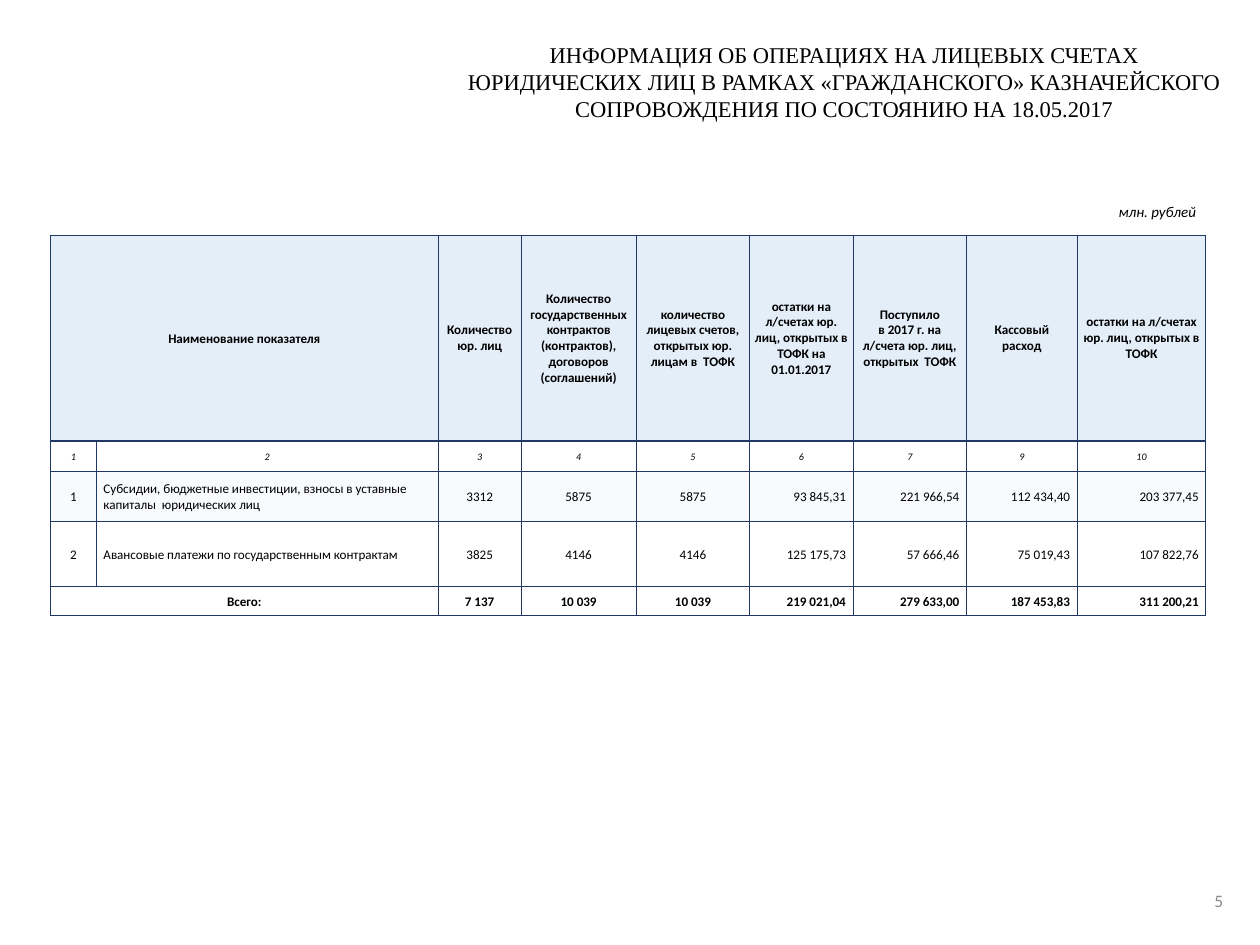
from pptx import Presentation
from pptx.dml.color import RGBColor
from pptx.enum.text import MSO_ANCHOR, MSO_AUTO_SIZE, PP_ALIGN
from pptx.oxml import parse_xml
from pptx.oxml.ns import nsdecls, qn
from pptx.util import Inches, Pt

LEFT, CENTER, RIGHT = PP_ALIGN.LEFT, PP_ALIGN.CENTER, PP_ALIGN.RIGHT
TOP, MIDDLE = MSO_ANCHOR.TOP, MSO_ANCHOR.MIDDLE

BLACK = RGBColor(0x00, 0x00, 0x00)
GRAY = RGBColor(0x8C, 0x8C, 0x8C)
LIGHT_BLUE = RGBColor(0xDE, 0xEB, 0xF7)
NAVY = RGBColor(0x20, 0x38, 0x64)

SLIDE_WIDTH, SLIDE_HEIGHT = 14, 10.5
TITLE_LEFT, TITLE_WIDTH = 5.05, 8.66
RIGHT_EDGE = TITLE_LEFT + TITLE_WIDTH
TABLE_LEFT, TABLE_TOP = 0.56, 2.62
COLUMN_WIDTHS = [0.51, 3.8, 0.92, 1.28, 1.26, 1.15, 1.26, 1.23, 1.43]
ROW_HEIGHTS = [2.28, 0.34, 0.56, 0.72, 0.32]
NAME_COLUMN, FIRST_AMOUNT_COLUMN = 1, 5
HEADER_ROW, NUMBER_ROW, TOTAL_ROW = 0, 1, 4

TITLE = ("ИНФОРМАЦИЯ ОБ ОПЕРАЦИЯХ НА ЛИЦЕВЫХ СЧЕТАХ ЮРИДИЧЕСКИХ ЛИЦ В РАМКАХ "
         "«ГРАЖДАНСКОГО» КАЗНАЧЕЙСКОГО СОПРОВОЖДЕНИЯ ПО СОСТОЯНИЮ НА 18.05.2017")

# An empty second entry is covered by the merged first cell.
ROWS = [
    ["Наименование показателя", "",
     "Количество\nюр. лиц",
     "Количество государственных контрактов (контрактов), договоров (соглашений)",
     "количество лицевых счетов, открытых юр. лицам в  ТОФК",
     "остатки на л/счетах юр. лиц, открытых в ТОФК на 01.01.2017",
     "Поступило\nв 2017 г. на л/счета юр. лиц, открытых  ТОФК",
     "Кассовый\nрасход",
     "остатки на л/счетах юр. лиц, открытых в ТОФК"],
    ["1", "2", "3", "4", "5", "6", "7", "9", "10"],
    ["1", "Субсидии, бюджетные инвестиции, взносы в уставные капиталы  юридических лиц",
     "3312", "5875", "5875", "93 845,31", "221 966,54", "112 434,40", "203 377,45"],
    ["2", "Авансовые платежи по государственным контрактам",
     "3825", "4146", "4146", "125 175,73", "57 666,46", "75 019,43", "107 822,76"],
    ["Всего:", "", "7 137", "10 039", "10 039",
     "219 021,04", "279 633,00", "187 453,83", "311 200,21"],
]
FILL_OPACITY = {HEADER_ROW: 82, 2: 21}


def write_text(frame, text, size=10.5, font="Calibri", color=BLACK, bold=False,
               italic=False, align=LEFT):
    frame.text = text
    for paragraph in frame.paragraphs:
        paragraph.alignment = align
        for run in paragraph.runs:
            run.font.size = Pt(size)
            run.font.name = font
            run.font.color.rgb = color
            run.font.bold = bold
            run.font.italic = italic


def set_margins(target, left, top, right, bottom):
    target.margin_left, target.margin_top = Inches(left), Inches(top)
    target.margin_right, target.margin_bottom = Inches(right), Inches(bottom)


def add_title(slide):
    title = slide.shapes.title
    title.left, title.top = Inches(TITLE_LEFT), Inches(0.4)
    title.width, title.height = Inches(TITLE_WIDTH), Inches(1.01)
    frame = title.text_frame
    frame.word_wrap = True
    frame.auto_size = MSO_AUTO_SIZE.SHAPE_TO_FIT_TEXT
    frame.vertical_anchor = TOP
    write_text(frame, TITLE, size=18, font="Times New Roman", align=CENTER)


def add_label(slide, text, top, width, height, anchor=TOP,
              margins=(0.1, 0.05, 0.1, 0.05), **text_format):
    """Add a text box that ends at the right edge of the title."""
    box = slide.shapes.add_textbox(Inches(RIGHT_EDGE - width), Inches(top),
                                   Inches(width), Inches(height))
    frame = box.text_frame
    frame.word_wrap = True
    frame.vertical_anchor = anchor
    set_margins(frame, *margins)
    write_text(frame, text, **text_format)


def set_borders(cell):
    properties = cell._tc.get_or_add_tcPr()
    for side in ("lnL", "lnR", "lnT", "lnB"):
        properties.append(parse_xml(
            f'<a:{side} {nsdecls("a")} w="{Pt(1)}"><a:solidFill>'
            f'<a:srgbClr val="{NAVY}"/></a:solidFill></a:{side}>'))


def set_fill(cell, opacity):
    if opacity is None:
        cell.fill.background()
        return
    cell.fill.solid()
    cell.fill.fore_color.rgb = LIGHT_BLUE
    color = cell._tc.tcPr.find(qn("a:solidFill"))[0]
    color.append(parse_xml(f'<a:alpha {nsdecls("a")} val="{opacity * 1000}"/>'))


def cell_layout(row, column):
    """Return the alignment and the margins of a cell."""
    if row == HEADER_ROW:
        return CENTER, (0.04, 0.01, 0.04, 0) if column == 0 else (0.04,) * 4
    if row != NUMBER_ROW and column >= FIRST_AMOUNT_COLUMN:
        return RIGHT, (0.01, 0.01, 0.08, 0)
    if row not in (NUMBER_ROW, TOTAL_ROW) and column == NAME_COLUMN:
        return LEFT, (0.08, 0.01, 0.08, 0)
    return CENTER, (0.01, 0.01, 0.01, 0)


def add_account_table(slide):
    table = slide.shapes.add_table(
        len(ROWS), len(COLUMN_WIDTHS), Inches(TABLE_LEFT), Inches(TABLE_TOP),
        Inches(sum(COLUMN_WIDTHS)), Inches(sum(ROW_HEIGHTS))).table
    table.first_row = table.horz_banding = False
    for column, width in zip(table.columns, COLUMN_WIDTHS):
        column.width = Inches(width)
    for row, height in zip(table.rows, ROW_HEIGHTS):
        row.height = Inches(height)
    for row in (HEADER_ROW, TOTAL_ROW):
        table.cell(row, 0).merge(table.cell(row, NAME_COLUMN))
    for row, texts in enumerate(ROWS):
        for column, text in enumerate(texts):
            cell = table.cell(row, column)
            set_borders(cell)
            set_fill(cell, FILL_OPACITY.get(row))
            if cell.is_spanned:
                continue
            align, margins = cell_layout(row, column)
            set_margins(cell, *margins)
            cell.vertical_anchor = MIDDLE
            write_text(cell.text_frame, text, align=align,
                       size=8 if row == NUMBER_ROW else 10.5,
                       bold=row in (HEADER_ROW, TOTAL_ROW),
                       italic=row == NUMBER_ROW)


def main():
    presentation = Presentation()
    presentation.slide_width = Inches(SLIDE_WIDTH)
    presentation.slide_height = Inches(SLIDE_HEIGHT)
    title_only = presentation.slide_layouts.get_by_name("Title Only")
    slide = presentation.slides.add_slide(title_only)
    add_title(slide)
    add_account_table(slide)
    add_label(slide, "млн. рублей", 2.2, 1.38, 0.3, size=12, italic=True)
    add_label(slide, "5", 9.73, 0.42, 0.56, anchor=MIDDLE,
              margins=(0.12, 0.06, 0.12, 0.06), size=14, color=GRAY, align=RIGHT)
    presentation.save("out.pptx")


if __name__ == "__main__":
    main()
